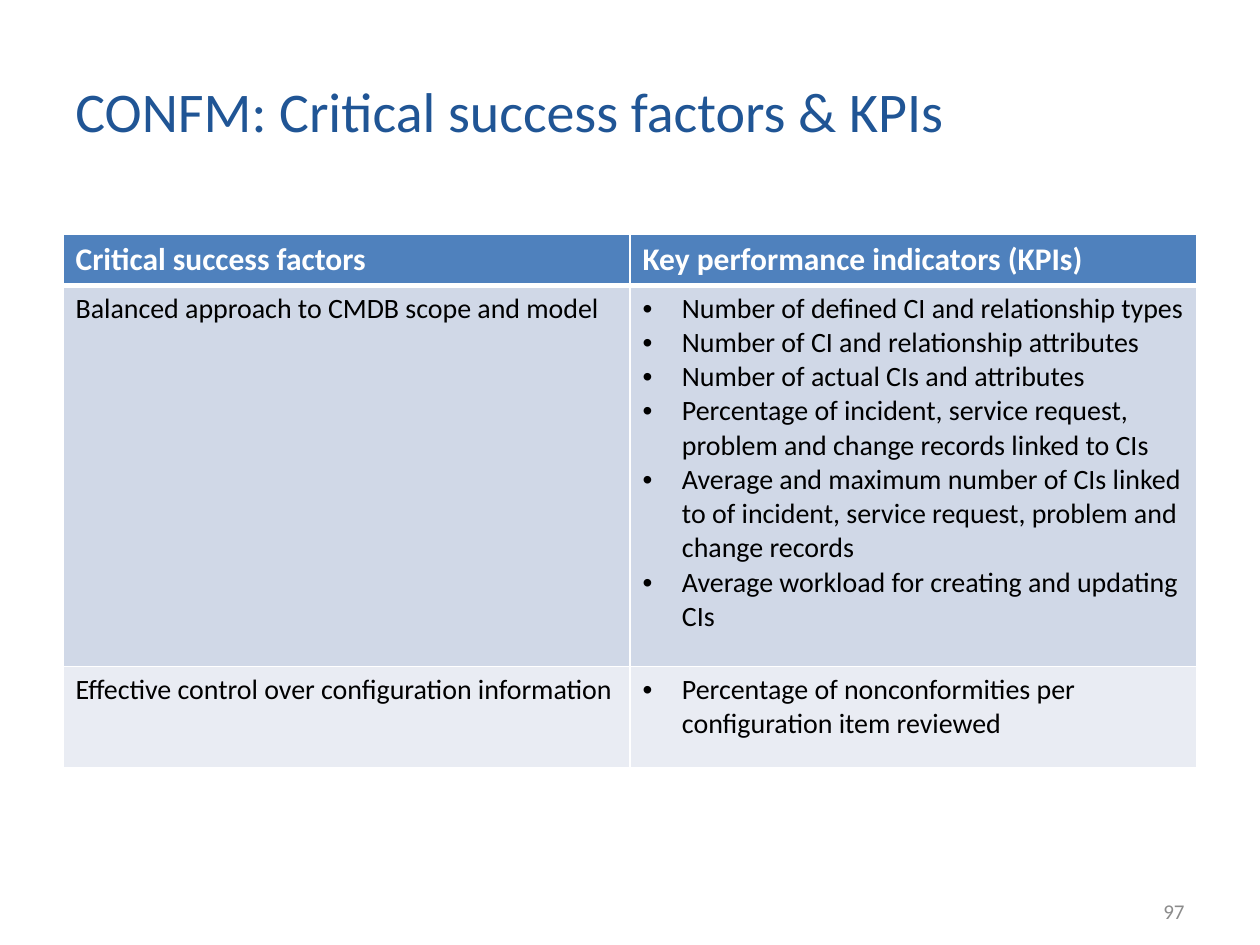
import pptx
import pptx.dml.color
import pptx.enum.text
import pptx.oxml
import pptx.oxml.ns
import pptx.util

Pt = pptx.util.Pt
ALIGN = pptx.enum.text.PP_ALIGN

TITLE = "CONFM: Critical success factors & KPIs"
PAGE_NUMBER = "97"
HEADERS = ["Critical success factors", "Key performance indicators (KPIs)"]
FACTORS = [
    ("Balanced approach to CMDB scope and model", [
        "Number of defined CI and relationship types",
        "Number of CI and relationship attributes",
        "Number of actual CIs and attributes",
        "Percentage of incident, service request, problem and change records linked to CIs",
        "Average and maximum number of CIs linked to of incident, service request, "
        "problem and change records",
        "Average workload for creating and updating CIs",
    ]),
    ("Effective control over configuration information", [
        "Percentage of nonconformities per configuration item reviewed",
    ]),
]

THEME = {
    "font": "Calibri",
    "title": (32, "205595"),
    "header": (18, "FFFFFF"),
    "body": (16, "000000"),
    "number": (12, "8B8B8B"),
    "header_fill": "4F81BD",
    "bands": ["D0D8E7", "E9ECF3"],
    "border": "FFFFFF",
}
SLIDE_W, SLIDE_H = 720, 540
MARGIN = 36
TABLE_TOP = 134
ROW_HEIGHTS = [29, 218, 58]
THIN, THICK = 0.96, 3
BULLET_INDENT = 22.5


def rgb(value):
    return pptx.dml.color.RGBColor.from_string(value)


def style(p, role, bold=False):
    size, color = THEME[role]
    p.font.name = THEME["font"]
    p.font.size = Pt(size)
    p.font.bold = bold
    p.font.color.rgb = rgb(color)


def add_text(slide, text, role, left, top, width, height, align=ALIGN.LEFT):
    tf = slide.shapes.add_textbox(Pt(left), Pt(top), Pt(width), Pt(height)).text_frame
    tf.word_wrap = True
    tf.vertical_anchor = pptx.enum.text.MSO_ANCHOR.MIDDLE
    p = tf.paragraphs[0]
    p.text = text
    p.alignment = align
    style(p, role)


def add_xml(parent, tag, content="", **attributes):
    attrs = "".join(f' {key}="{value}"' for key, value in attributes.items())
    ns = pptx.oxml.ns.nsdecls("a")
    parent.append(pptx.oxml.parse_xml(f"<a:{tag} {ns}{attrs}>{content}</a:{tag}>"))


def add_bullet(p):
    indent = Pt(BULLET_INDENT)
    pPr = p._p.get_or_add_pPr()
    pPr.set("marL", str(indent))
    pPr.set("indent", str(-indent))
    add_xml(pPr, "buClr", f'<a:srgbClr val="{THEME["body"][1]}"/>')
    add_xml(pPr, "buFont", typeface="Arial")
    add_xml(pPr, "buChar", char="•")


def fill_cell(cell, lines, role, fill, bulleted=False, top=THIN, bottom=THIN):
    tcPr = cell._tc.get_or_add_tcPr()
    line = f'<a:solidFill><a:srgbClr val="{THEME["border"]}"/></a:solidFill>'
    for side, width in zip("LRTB", (THIN, THIN, top, bottom)):
        add_xml(tcPr, f"ln{side}", line, w=Pt(width))
    cell.fill.solid()
    cell.fill.fore_color.rgb = rgb(fill)
    tf = cell.text_frame
    for i, text in enumerate(lines):
        p = tf.add_paragraph() if i else tf.paragraphs[0]
        p.text = text
        if bulleted:
            add_bullet(p)
        style(p, role, bold=role == "header")


def add_factor_table(slide):
    table = slide.shapes.add_table(
        len(ROW_HEIGHTS), len(HEADERS), Pt(MARGIN), Pt(TABLE_TOP),
        Pt(SLIDE_W - 2 * MARGIN), Pt(sum(ROW_HEIGHTS))).table
    for row, height in zip(table.rows, ROW_HEIGHTS):
        row.height = Pt(height)
    for col, header in enumerate(HEADERS):
        fill_cell(table.cell(0, col), [header], "header", THEME["header_fill"], bottom=THICK)
    for row, ((factor, kpis), band) in enumerate(zip(FACTORS, THEME["bands"]), 1):
        top = THICK if row == 1 else THIN
        fill_cell(table.cell(row, 0), [factor], "body", band, top=top)
        fill_cell(table.cell(row, 1), kpis, "body", band, bulleted=True, top=top)


def main():
    prs = pptx.Presentation()
    prs.slide_width, prs.slide_height = Pt(SLIDE_W), Pt(SLIDE_H)
    slide = prs.slides.add_slide(prs.slide_layouts[6])
    add_text(slide, TITLE, "title", MARGIN, 21.6, 579, 83)
    add_factor_table(slide)
    add_text(slide, PAGE_NUMBER, "number", SLIDE_W - MARGIN - 168, 506, 168, 29, ALIGN.RIGHT)
    prs.save("out.pptx")


if __name__ == "__main__":
    main()
